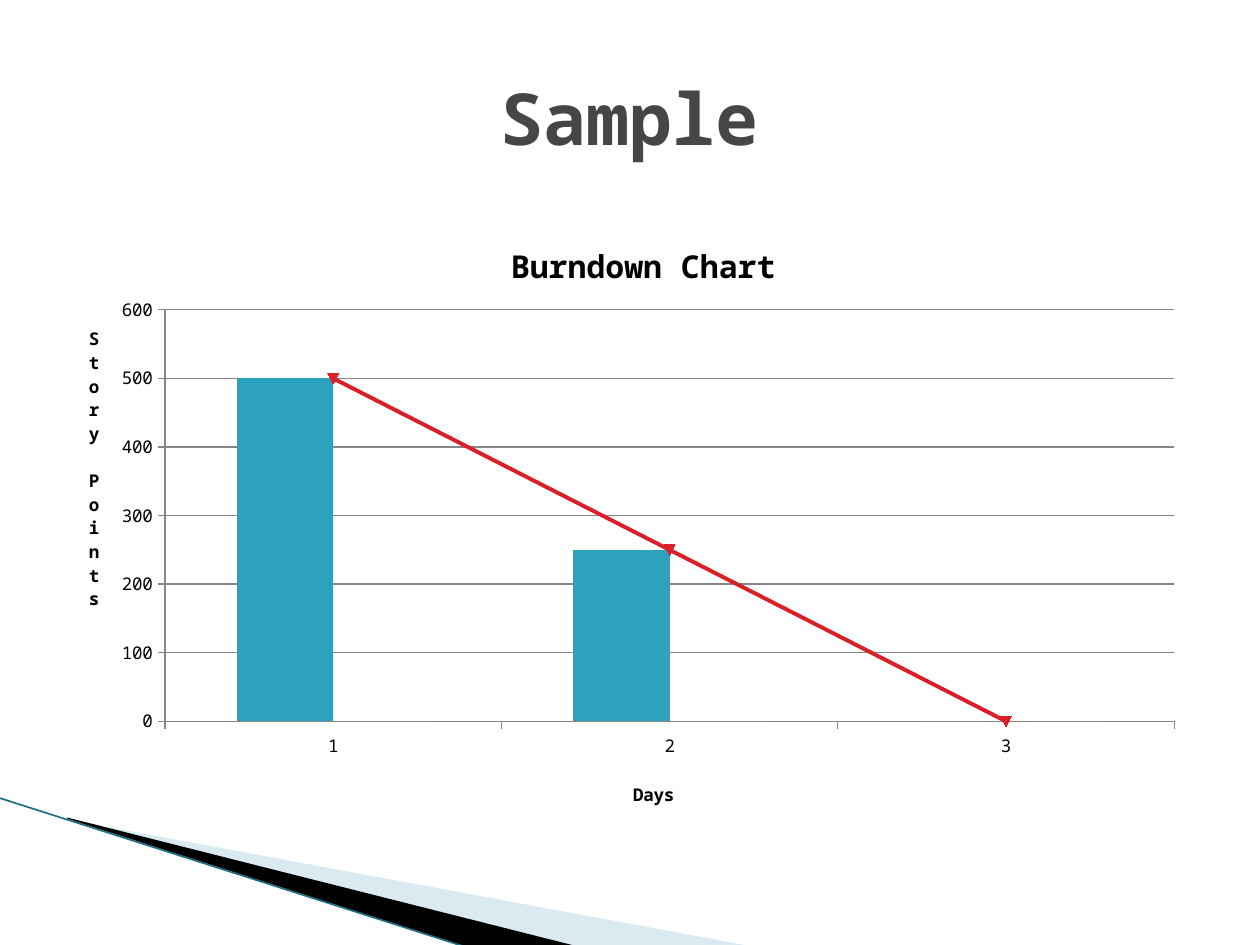
from lxml import etree
from pptx import Presentation
from pptx.chart.data import CategoryChartData
from pptx.dml.color import RGBColor
from pptx.enum.chart import XL_CHART_TYPE as ChartType, XL_TICK_MARK as Tick
from pptx.enum.shapes import MSO_CONNECTOR as Connector
from pptx.enum.text import MSO_ANCHOR as Anchor, PP_ALIGN as Align
from pptx.oxml import parse_xml
from pptx.oxml.ns import nsdecls, qn
from pptx.util import Cm, Pt

FONT = "Noto Sans Mono"
GRAY = "868686"


def rgb(value):
    """Turn a hex string into a colour."""
    return RGBColor.from_string(value)


def set_font(font, size, color="000000", bold=False):
    """Format a font."""
    font.name, font.size, font.bold = FONT, Pt(size), bold
    font.color.rgb = rgb(color)


def put_text(tf, text, align=Align.CENTER, **style):
    """Write one formatted paragraph into a text frame."""
    p = tf.paragraphs[0]
    p.alignment = align
    r = p.add_run()
    r.text = text
    set_font(r.font, **style)


def set_line(line, color, width):
    """Format a line."""
    line.color.rgb = rgb(color)
    line.width = Pt(width)


def set_layout(parent, x, y, w=None, h=None):
    """Place a chart part by fractions of the chart area."""
    for old in parent.findall(qn("c:layout")):
        parent.remove(old)
    layout = etree.Element(qn("c:layout"))
    manual = etree.SubElement(layout, qn("c:manualLayout"))
    values = [("xMode", "edge"), ("yMode", "edge"), ("x", x), ("y", y)]
    if w:
        values = [("layoutTarget", "inner")] + values + [("w", w), ("h", h)]
    for tag, value in values:
        etree.SubElement(manual, qn(f"c:{tag}")).set("val", str(value))
    parent.insert(0 if parent.find(qn("c:tx")) is None else 1, layout)


def add_wedge(s, left, top, points, color, alpha=None):
    """Draw a filled outline from points in centimetres."""
    pts = [(Cm(left + x), Cm(top + y)) for x, y in points]
    builder = s.shapes.build_freeform(*pts[0], scale=1.0)
    builder.add_line_segments(pts[1:], close=True)
    sp = builder.convert_to_shape()
    sp.shadow.inherit = False
    sp.fill.solid()
    sp.fill.fore_color.rgb = rgb(color)
    sp.line.fill.background()
    if alpha:
        clr = sp.fill._xPr.find(".//" + qn("a:srgbClr"))
        etree.SubElement(clr, qn("a:alpha")).set("val", str(alpha * 1000))


def add_swoosh(s, left, top):
    """Draw the corner decoration."""
    add_wedge(s, left, top, [(1.4, 0.53), (15.11, 3.07), (11.58, 3.07), (1.4, 0.51)],
              "A0CBDC", alpha=40)
    add_wedge(s, left, top, [(1.35, 0.48), (11.61, 3.07), (9.45, 3.1), (1.37, 0.51)],
              "000000")
    line = s.shapes.add_connector(Connector.STRAIGHT, Cm(left), Cm(top + 0.09),
                                  Cm(left + 9.42), Cm(top + 3.1))
    set_line(line.line, "1B6F83", 0.95)
    etree.SubElement(line._element.spPr, qn("a:effectLst"))


def add_title(s, left, top, width, height):
    """Write the slide title."""
    box = s.shapes.add_textbox(Cm(left), Cm(top), Cm(width), Cm(height))
    tf = box.text_frame
    tf.word_wrap = True
    tf.vertical_anchor = Anchor.MIDDLE
    put_text(tf, "Sample", size=41, color="464646", bold=True)


def move_to_line(chart, index):
    """Turn one column series into a line with markers."""
    bar = chart._chartSpace.find(".//" + qn("c:barChart"))
    ser = bar.findall(qn("c:ser"))[index]
    invert = ser.find(qn("c:invertIfNegative"))
    if invert is not None:
        ser.remove(invert)
    line = parse_xml(f'<c:lineChart {nsdecls("c")}><c:grouping val="standard"/>'
                     '<c:varyColors val="0"/><c:marker val="1"/></c:lineChart>')
    line.insert(2, ser)
    for axis in bar.findall(qn("c:axId")):
        etree.SubElement(line, qn("c:axId")).set("val", axis.get("val"))
    bar.addnext(line)


def format_axis(axis, title, x, y):
    """Format an axis and place its title."""
    axis.major_tick_mark = Tick.OUTSIDE
    set_line(axis.format.line, GRAY, 0.75)
    set_font(axis.tick_labels.font, 10)
    put_text(axis.axis_title.text_frame, title, size=10, bold=True)
    set_layout(axis.axis_title._element, x, y)


def add_burndown(s, left, top, width, height):
    """Build the combined column and line chart."""
    data = CategoryChartData()
    data.categories = ["1", "2", "3"]
    data.add_series("Series 1", (500, 250, 0))
    data.add_series("Series 2", (0, 0, 0))
    data.add_series("Series 3", (500, 250, 0))
    chart = s.shapes.add_chart(ChartType.COLUMN_CLUSTERED, Cm(left), Cm(top),
                               Cm(width), Cm(height), data).chart
    set_font(chart.font, 10)
    chart.has_legend = False
    put_text(chart.chart_title.text_frame, "Burndown Chart", size=18, bold=True)
    set_layout(chart.chart_title._element, 0.39, 0.05)

    move_to_line(chart, 2)
    columns, lines = chart.plots
    columns.gap_width, columns.overlap = 150, 0
    columns.vary_by_categories = False
    for ser, color in zip(columns.series, ("2DA2BF", "EB641B")):
        ser.format.fill.solid()
        ser.format.fill.fore_color.rgb = rgb(color)
    trend = lines.series[0]
    trend.smooth = False
    set_line(trend.format.line, "DA1F28", 2.25)
    trend.marker.size = 6
    trend.marker.format.fill.solid()
    trend.marker.format.fill.fore_color.rgb = rgb("DA1F28")

    format_axis(chart.category_axis, "Days", 0.5, 0.92)
    values = chart.value_axis
    format_axis(values, "Story Points", 0.02, 0.19)
    values.axis_title.text_frame._txBody.bodyPr.set("vert", "wordArtVert")
    values.minimum_scale, values.maximum_scale, values.major_unit = 0, 600, 100
    set_line(values.major_gridlines.format.line, GRAY, 0.75)
    set_layout(chart._chartSpace.find(".//" + qn("c:plotArea")), 0.09, 0.17, 0.89, 0.66)


def main():
    """Build and save the slide."""
    prs = Presentation()
    prs.slide_width, prs.slide_height = Cm(25.4), Cm(19.05)
    s = prs.slides.add_slide(prs.slide_layouts[6])
    add_swoosh(s, 0, 16)
    add_title(s, 1.27, 0.76, 22.86, 3.18)
    add_burndown(s, 1.27, 4.11, 22.86, 12.57)
    prs.save("out.pptx")


if __name__ == "__main__":
    main()
